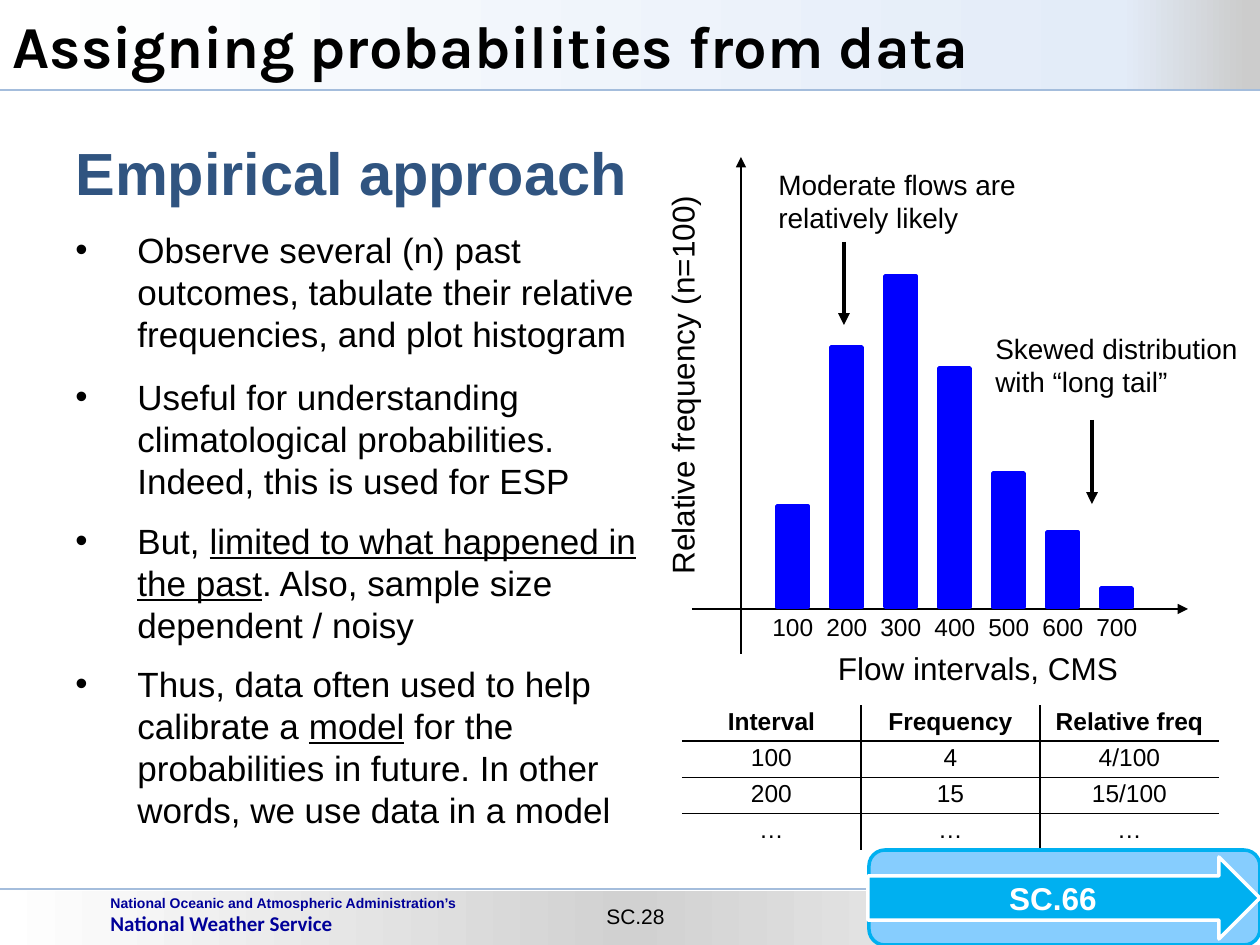
"""Build the slide on assigning probabilities from data."""
from lxml.etree import SubElement
from pptx import Presentation
from pptx.dml.color import RGBColor
from pptx.enum.shapes import MSO_CONNECTOR, MSO_SHAPE
from pptx.enum.text import MSO_ANCHOR as ANCHOR, PP_ALIGN as ALIGN
from pptx.oxml.ns import qn
from pptx.util import Pt

BLACK = RGBColor(0x00, 0x00, 0x00)
WHITE = RGBColor(0xFF, 0xFF, 0xFF)
NAVY = RGBColor(0x00, 0x00, 0x99)
STEEL = RGBColor(0x30, 0x54, 0x80)
RULE = RGBColor(0xA4, 0xBD, 0xDC)
BAR = RGBColor(0x00, 0x00, 0xFF)
SKY = RGBColor(0x86, 0xCD, 0xFE)
CYAN = RGBColor(0x00, 0xB0, 0xF0)

TITLE = "Assigning probabilities from data"
HEADING = "Empirical approach"
BULLETS = [
    (12, [("Observe several (n) past outcomes, tabulate their relative "
           "frequencies, and plot histogram", False)]),
    (12, [("Useful for understanding climatological probabilities. "
           "Indeed, this is used for ESP", False)]),
    (10, [("But, ", False), ("limited to what happened in the past", True),
          (". Also, sample size dependent / noisy", False)]),
    (10, [("Thus, data often used to help calibrate a ", False), ("model", True),
          (" for the probabilities in future. In other words, "
           "we use data in a model", False)]),
]
BANDS = [
    ((0, 891, 1260, 55), [(0, "FFFFFF"), (50, "D1D1D1"), (100, "FFFFFF")], 889),
    ((0, 0, 1260, 90), [(0, "FFFFFF"), (89, "E3ECF8"), (99, "CCCCCC")], 90),
]
LABELS = [
    ("SC.28", (592, 897, 87, 38), 12, ALIGN.CENTER, False, 0),
    ("Flow intervals, CMS", (824, 643, 308, 50), 18, ALIGN.CENTER, False, 0),
    ("Relative frequency (n=100)", (478, 358, 408, 50), 18, ALIGN.LEFT, False, 270),
    ("Moderate flows are relatively likely", (766, 161, 341, 81), 16, ALIGN.LEFT, True, 0),
    ("Skewed distribution with “long tail”", (983, 325, 277, 81), 16, ALIGN.LEFT, True, 0),
]
ARROWS = [
    ((741, 654, 741, 157), 1),
    ((692, 609, 1188, 609), 1),
    ((844, 242, 844, 325), 2.25),
    ((1092, 420, 1092, 504), 2.25),
]
BAR_HEIGHTS = {"100": 101, "200": 260, "300": 331, "400": 239,
               "500": 134, "600": 75, "700": 19}
BAR_LEFT, BAR_STEP, BAR_WIDTH, BAR_BASE = 777, 54, 31, 607
TABLE = [
    ("Interval", "Frequency", "Relative freq"),
    ("100", "4", "4/100"),
    ("200", "15", "15/100"),
    ("…", "…", "…"),
]
COL_WIDTH, ROW_HEIGHT = 179, 36


def px(n):
    return round(n * 914400 / 126)


def box(*lengths):
    return [px(n) for n in lengths]


def add_run(p, text, size, color=BLACK, bold=False, name="Arial", underline=None):
    r = p.add_run()
    r.text = text
    f = r.font
    f.size, f.bold, f.name, f.underline = Pt(size), bold, name, underline
    f.color.rgb = color


def add_text(shapes, place, wrap=True):
    sp = shapes.add_textbox(*box(*place))
    sp.text_frame.word_wrap = wrap
    return sp


def add_shape(shapes, kind, place, fill=None, line=None):
    sp = shapes.add_shape(kind, *box(*place))
    sp.shadow.inherit = False
    if fill is not None:
        sp.fill.solid()
        sp.fill.fore_color.rgb = fill
    if line is None:
        sp.line.fill.background()
    else:
        sp.line.color.rgb = line
        sp.line.width = Pt(2)
    return sp


def add_line(shapes, ends, color, width, arrow=False):
    line = shapes.add_connector(MSO_CONNECTOR.STRAIGHT, *box(*ends))
    line.line.color.rgb = color
    line.line.width = Pt(width)
    props = line.element.spPr
    if arrow:
        SubElement(props.find(qn("a:ln")), qn("a:tailEnd"), type="triangle")
    SubElement(props, qn("a:effectLst"))


def set_gradient(sp, stops):
    sp.fill.gradient()
    sp.fill.gradient_angle = 0
    stop_list = sp.element.spPr.find(".//" + qn("a:gsLst"))
    stop_list.clear()
    for percent, color in stops:
        stop = SubElement(stop_list, qn("a:gs"), pos=str(percent * 1000))
        SubElement(stop, qn("a:srgbClr"), val=color)


def set_borders(cell, sides):
    props = cell._tc.get_or_add_tcPr()
    for side in "LRTB":
        ln = SubElement(props, qn("a:ln" + side), w=str(Pt(1)))
        if side in sides:
            fill = SubElement(ln, qn("a:solidFill"))
            SubElement(fill, qn("a:srgbClr"), val=str(BLACK))
        else:
            SubElement(ln, qn("a:noFill"))


def add_title(s):
    title = s.shapes.title
    s.shapes.element.append(title.element)
    title.left, title.top, title.width, title.height = box(0, 0, 1260, 90)
    tf = title.text_frame
    tf.word_wrap, tf.vertical_anchor = False, ANCHOR.MIDDLE
    p = tf.paragraphs[0]
    p.alignment = ALIGN.LEFT
    add_run(p, TITLE, 34, bold=True, name="Karla")


def add_body(shapes):
    sp = add_text(shapes, (63, 126, 600, 714))
    sp.fill.solid()
    sp.fill.fore_color.rgb = WHITE
    tf = sp.text_frame
    tf.margin_top = px(10)
    add_run(tf.paragraphs[0], HEADING, 34, STEEL, True)
    for space, runs in BULLETS:
        p = tf.add_paragraph()
        p.space_before = Pt(space)
        props = p._p.get_or_add_pPr()
        props.set("marL", str(px(62)))
        props.set("indent", str(-px(62)))
        SubElement(props, qn("a:buFont"), typeface="Arial")
        SubElement(props, qn("a:buChar"), char="•")
        for text, underline in runs:
            add_run(p, text, 20, underline=underline)


def add_histogram(shapes):
    for i, height in enumerate(BAR_HEIGHTS.values()):
        place = (BAR_LEFT + i * BAR_STEP, BAR_BASE - height, BAR_WIDTH, height)
        add_shape(shapes, MSO_SHAPE.RECTANGLE, place, BAR, BAR)
    p = add_text(shapes, (760, 606, 402, 43), False).text_frame.paragraphs[0]
    tabs = SubElement(p._p.get_or_add_pPr(), qn("a:tabLst"))
    for i in range(1, len(BAR_HEIGHTS)):
        SubElement(tabs, qn("a:tab"), pos=str(px(i * BAR_STEP)), algn="l")
    add_run(p, "\t".join(BAR_HEIGHTS), 14)


def add_frequencies(shapes):
    rows, cols = len(TABLE), len(TABLE[0])
    table = shapes.add_table(rows, cols, *box(
        682, 705, cols * COL_WIDTH, rows * ROW_HEIGHT)).table
    table.first_row = table.horz_banding = False
    for i, row in enumerate(TABLE):
        for j, text in enumerate(row):
            cell = table.cell(i, j)
            set_borders(cell, "L" * (j > 0) + "R" * (j < cols - 1)
                        + "T" * (i > 0) + "B" * (i < rows - 1))
            cell.fill.background()
            cell.vertical_anchor = ANCHOR.BOTTOM
            p = cell.text_frame.paragraphs[0]
            p.alignment, p.line_spacing = ALIGN.CENTER, 0.8
            add_run(p, text, 14, bold=i == 0)


def add_badge(shapes):
    group = shapes.add_group_shape().shapes
    add_shape(group, MSO_SHAPE.ROUNDED_RECTANGLE, (869, 850, 391, 95), SKY, CYAN)
    arrow = add_shape(group, MSO_SHAPE.RIGHT_ARROW, (868, 857, 392, 82), CYAN, WHITE)
    arrow.adjustments[0] = 0.54
    tf = arrow.text_frame
    tf.vertical_anchor = ANCHOR.MIDDLE
    tf.paragraphs[0].alignment = ALIGN.CENTER
    add_run(tf.paragraphs[0], "SC.66", 18, WHITE, True)


def main():
    prs = Presentation()
    prs.slide_width, prs.slide_height = box(1260, 945)
    s = prs.slides.add_slide(prs.slide_layouts[5])
    shapes = s.shapes
    for place, stops, rule_y in BANDS:
        set_gradient(add_shape(shapes, MSO_SHAPE.RECTANGLE, place), stops)
        add_line(shapes, (0, rule_y, 1260, rule_y), RULE, 0.75)
    add_title(s)
    tf = add_text(shapes, (98, 888, 420, 54)).text_frame
    add_run(tf.paragraphs[0], "National Oceanic and Atmospheric Administration’s",
            8, NAVY, True)
    add_run(tf.add_paragraph(), "National Weather Service", 12, NAVY, True, "Calibri")
    add_body(shapes)
    for text, place, size, align, wrap, turn in LABELS:
        sp = add_text(shapes, place, wrap)
        sp.rotation = turn
        sp.text_frame.paragraphs[0].alignment = align
        add_run(sp.text_frame.paragraphs[0], text, size)
    for ends, width in ARROWS:
        add_line(shapes, ends, BLACK, width, True)
    add_histogram(shapes)
    add_frequencies(shapes)
    add_badge(shapes)
    prs.save("out.pptx")


if __name__ == "__main__":
    main()
